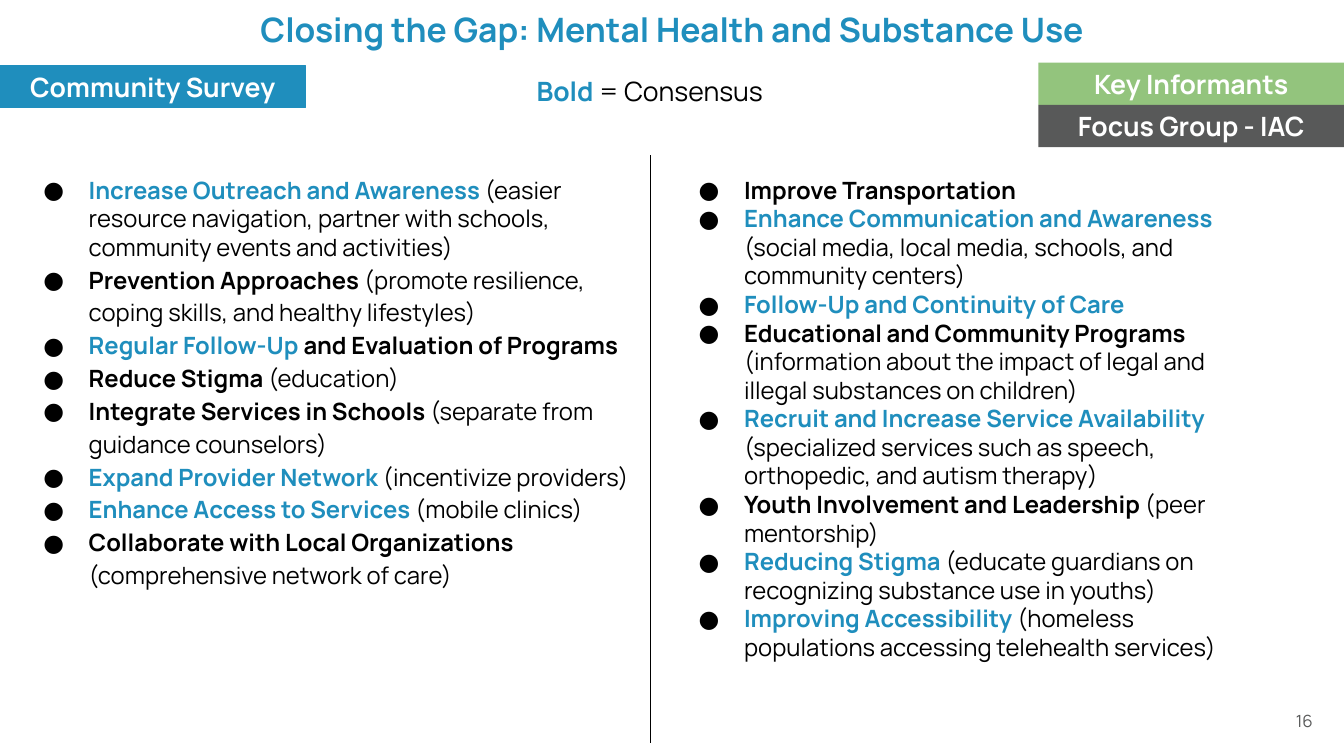
from dataclasses import dataclass

from lxml import etree
from pptx import Presentation
from pptx.dml.color import RGBColor
from pptx.enum.shapes import MSO_CONNECTOR, MSO_SHAPE
from pptx.enum.text import MSO_ANCHOR, MSO_AUTO_SIZE, PP_ALIGN
from pptx.oxml.ns import qn
from pptx.util import Inches, Pt

LEFT, CENTER, RIGHT = PP_ALIGN.LEFT, PP_ALIGN.CENTER, PP_ALIGN.RIGHT
TOP, MIDDLE = MSO_ANCHOR.TOP, MSO_ANCHOR.MIDDLE
FIXED = MSO_AUTO_SIZE.NONE
RECTANGLE = MSO_SHAPE.RECTANGLE
STRAIGHT = MSO_CONNECTOR.STRAIGHT
TITLE_ONLY = 5


@dataclass(frozen=True)
class Theme:
    font: str = "Manrope"
    blue: str = "1F8EBD"
    green: str = "93C47D"
    gray: str = "585959"
    black: str = "000000"
    white: str = "FFFFFF"
    title_size: int = 24
    label_size: int = 19
    body_size: int = 17
    number_size: int = 12


THEME = Theme()

SURVEY_IDEAS = [
    [("Increase Outreach and Awareness ", True, True),
     ("(easier resource navigation, partner with schools, "
      "community events and activities)", False, False)],
    [("Prevention Approaches ", True, False),
     ("(promote resilience, coping skills, and healthy lifestyles)", False, False)],
    [("Regular Follow-Up ", True, True),
     ("and Evaluation of Programs", True, False)],
    [("Reduce Stigma ", True, False), ("(education)", False, False)],
    [("Integrate Services in Schools ", True, False),
     ("(separate from guidance counselors)", False, False)],
    [("Expand Provider Network ", True, True),
     ("(incentivize providers)", False, False)],
    [("Enhance Access to Services ", True, True),
     ("(mobile clinics)", False, False)],
    [("Collaborate with Local Organizations ", True, False),
     ("(comprehensive network of care)", False, False)],
]

INFORMANT_IDEAS = [
    [("Improve Transportation", True, False)],
    [("Enhance Communication and Awareness ", True, True),
     ("(social media, local media, schools, and community centers)", False, False)],
    [("Follow-Up and Continuity of Care", True, True)],
    [("Educational and Community Programs ", True, False),
     ("(information about the impact of legal and illegal "
      "substances on children)", False, False)],
    [("Recruit and Increase Service Availability ", True, True),
     ("(specialized services such as speech, orthopedic, "
      "and autism therapy)", False, False)],
    [("Youth Involvement and Leadership ", True, False),
     ("(peer mentorship)", False, False)],
    [("Reducing Stigma ", True, True),
     ("(educate guardians on recognizing substance use in youths)", False, False)],
    [("Improving Accessibility ", True, True),
     ("(homeless populations accessing telehealth services)", False, False)],
]

LEGEND = [("Bold ", True, True), ("= Consensus", False, False)]


def color(value):
    return RGBColor.from_string(value)


def set_frame(frame, insets, anchor=TOP):
    frame.word_wrap = True
    frame.auto_size = FIXED
    frame.vertical_anchor = anchor
    frame.margin_left = frame.margin_right = Inches(insets[0])
    frame.margin_top = frame.margin_bottom = Inches(insets[1])


def style(paragraph, size, fill, bold, align):
    paragraph.alignment = align
    paragraph.font.name = THEME.font
    paragraph.font.size = Pt(size)
    paragraph.font.bold = bold
    paragraph.font.color.rgb = color(fill)


def write_phrases(paragraph, phrases, size, align):
    paragraph.alignment = align
    paragraph.font.name = THEME.font
    paragraph.font.size = Pt(size)
    for words, bold, consensus in phrases:
        run = paragraph.add_run()
        run.text = words
        run.font.bold = bold
        run.font.color.rgb = color(THEME.blue if consensus else THEME.black)


def add_bullet(paragraph):
    props = paragraph._p.get_or_add_pPr()
    props.set("marL", str(Inches(0.67)))
    props.set("indent", str(Inches(-0.45)))
    tint = etree.SubElement(props, qn("a:buClr"))
    etree.SubElement(tint, qn("a:srgbClr"), val=THEME.black)
    etree.SubElement(props, qn("a:buFont"), typeface=THEME.font)
    etree.SubElement(props, qn("a:buChar"), char="●")


def add_box(slide, box, insets, anchor=TOP):
    frame = slide.shapes.add_textbox(*map(Inches, box)).text_frame
    set_frame(frame, insets, anchor)
    return frame


def add_title(slide, words, box):
    title = slide.shapes.title
    title.left, title.top, title.width, title.height = map(Inches, box)
    set_frame(title.text_frame, (0, 0.01))
    title.text_frame.text = words
    style(title.text_frame.paragraphs[0], THEME.title_size, THEME.blue, True, CENTER)


def add_source_label(slide, words, left, top, fill):
    label = slide.shapes.add_shape(
        RECTANGLE, Inches(left), Inches(top), Inches(3.03), Inches(0.42))
    label.shadow.inherit = False
    label.fill.solid()
    label.fill.fore_color.rgb = color(fill)
    label.line.fill.background()
    set_frame(label.text_frame, (0.1, 0.05))
    label.text_frame.text = words
    style(label.text_frame.paragraphs[0], THEME.label_size, THEME.white, True, CENTER)
    return label


def add_ideas(slide, ideas, box, later_spacing):
    frame = add_box(slide, box, (0.13, 0.13))
    for index, phrases in enumerate(ideas):
        paragraph = frame.add_paragraph() if index else frame.paragraphs[0]
        add_bullet(paragraph)
        paragraph.line_spacing = later_spacing if index else 1.0
        write_phrases(paragraph, phrases, THEME.body_size, LEFT)


def add_legend(slide, box):
    paragraph = add_box(slide, box, (0.13, 0.13)).paragraphs[0]
    paragraph.line_spacing = 1.15
    write_phrases(paragraph, LEGEND, THEME.label_size, CENTER)


def add_divider(slide, x, top, bottom):
    divider = slide.shapes.add_connector(
        STRAIGHT, Inches(x), Inches(top), Inches(x), Inches(bottom))
    divider.line.color.rgb = color(THEME.black)
    divider.line.width = Pt(0.75)
    etree.SubElement(divider._element.spPr, qn("a:effectLst"))


def add_page_number(slide, number, box):
    frame = add_box(slide, box, (0.1, 0.05), MIDDLE)
    frame.text = number
    style(frame.paragraphs[0], THEME.number_size, THEME.gray, False, RIGHT)


def main():
    deck = Presentation()
    deck.slide_width, deck.slide_height = Inches(13.33), Inches(7.5)
    slide = deck.slides.add_slide(deck.slide_layouts[TITLE_ONLY])
    add_page_number(slide, "16", (10.12, 6.95, 3, 0.4))
    add_title(slide, "Closing the Gap: Mental Health and Substance Use",
              (0.18, 0.08, 12.97, 0.51))
    add_ideas(slide, SURVEY_IDEAS, (0.08, 1.61, 6.37, 5.03), 1.15)
    add_divider(slide, 6.45, 1.54, 7.37)
    survey = add_source_label(slide, "Community Survey", 0, 0.65, THEME.blue)
    survey.line.color.rgb = color(THEME.blue)
    survey.line.width = Pt(0.75)
    add_source_label(slide, "Key Informants", 10.3, 0.62, THEME.green)
    add_source_label(slide, "Focus Group - IAC", 10.3, 1.04, THEME.gray)
    add_legend(slide, (4.26, 0.57, 4.37, 0.59))
    add_ideas(slide, INFORMANT_IDEAS, (6.58, 1.61, 6.13, 5.13), 1.0)
    deck.save("out.pptx")


if __name__ == "__main__":
    main()
